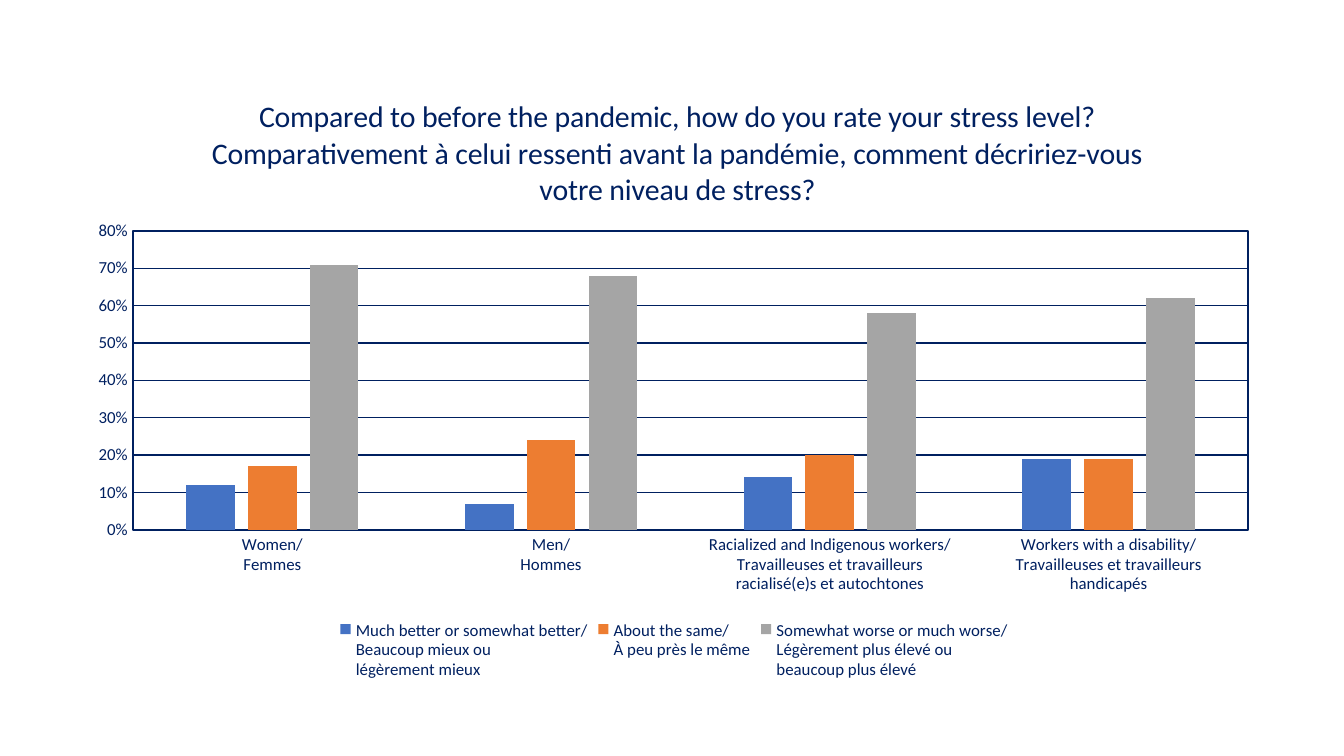
from lxml import etree
from pptx import Presentation, util as u
from pptx.chart.data import CategoryChartData
from pptx.dml.color import RGBColor
from pptx.enum import chart as kinds
from pptx.oxml import parse_xml
from pptx.oxml.ns import nsdecls, qn

PX = 914400 / 134.4
THEME = {
    "font": "Calibri",
    "ink": RGBColor.from_string("002060"),
    "bars": ["4472C4", "ED7D31", "A5A5A5"],
    "title_size": u.Pt(16),
    "label_size": u.Pt(9),
    "rule": u.Pt(0.75),
}
CHART = {"x": 75, "y": 67, "w": 1198, "h": 618}
PLOT = {"x": 133, "y": 231, "w": 1115, "h": 299}
TITLE = {"x": 208, "y": 93}


def place(element, index, frame, target=None):
    """Fix a chart part at a frame given in slide px."""
    for old in element.findall(qn("c:layout")):
        element.remove(old)
    layout = parse_xml(f"<c:layout {nsdecls('c')}><c:manualLayout/></c:layout>")
    settings = {"layoutTarget": target} if target else {}
    settings |= {f"{key}Mode": "edge" for key in frame if key in "xy"}
    for key, value in frame.items():
        start = CHART[key] if key in "xy" else 0
        span = CHART["w" if key in "xw" else "h"]
        settings[key] = f"{(value - start) / span:.4f}"
    for key, value in settings.items():
        etree.SubElement(layout[0], qn(f"c:{key}")).set("val", value)
    element.insert(index, layout)


def style_font(font, size):
    for key, value in {"name": THEME["font"], "size": size, "bold": False}.items():
        setattr(font, key, value)
    font.color.rgb = THEME["ink"]


deck = Presentation()
deck.slide_width, deck.slide_height = round(1344 * PX), round(756 * PX)
page = deck.slides.add_slide(deck.slide_layouts[6])

answers = CategoryChartData(number_format="0%")
answers.categories = [
    "Women/\nFemmes",
    "Men/\nHommes",
    "Racialized and Indigenous workers/\n"
    "Travailleuses et travailleurs racialisé(e)s et autochtones",
    "Workers with a disability/\nTravailleuses et travailleurs handicapés",
]
for name, values in {
    "Much better or somewhat better/\nBeaucoup mieux ou \nlégèrement mieux":
        [0.12, 0.07, 0.14, 0.19],
    "About the same/\nÀ peu près le même": [0.17, 0.24, 0.2, 0.19],
    "Somewhat worse or much worse/\nLégèrement plus élevé ou \nbeaucoup plus élevé":
        [0.71, 0.68, 0.58, 0.62],
}.items():
    answers.add_series(name, values)

chart = page.shapes.add_chart(
    kinds.XL_CHART_TYPE.COLUMN_CLUSTERED,
    *(round(CHART[key] * PX) for key in "xywh"), answers).chart
style_font(chart.font, THEME["label_size"])

# Title
heading = chart.chart_title.text_frame
heading.text = (
    "Compared to before the pandemic, how do you rate your stress level?\n"
    "Comparativement à celui ressenti avant la pandémie, "
    "comment décririez-vous votre niveau de stress?")
for para in heading.paragraphs:
    style_font(para.font, THEME["title_size"])
    for span in para.runs:
        style_font(span.font, THEME["title_size"])
chart.chart_title.include_in_layout = False
place(chart.chart_title._element, 1, TITLE)

# Bars
bars = chart.plots[0]
for key, value in {"gap_width": 219, "overlap": -27, "vary_by_categories": False}.items():
    setattr(bars, key, value)
for series, color in zip(bars.series, THEME["bars"]):
    series.format.fill.solid()
    series.format.fill.fore_color.rgb = RGBColor.from_string(color)

# Axes and gridlines
share, groups = chart.value_axis, chart.category_axis
for key, value in {"minimum_scale": 0, "maximum_scale": 0.8, "major_unit": 0.1,
                   "has_major_gridlines": True}.items():
    setattr(share, key, value)
for axis in (share, groups):
    axis.major_tick_mark = axis.minor_tick_mark = kinds.XL_TICK_MARK.NONE
    style_font(axis.tick_labels.font, THEME["label_size"])
share.tick_labels.number_format = "0%"
share.tick_labels.number_format_is_linked = False
share.format.line.fill.background()
for line in (groups.format.line, share.major_gridlines.format.line):
    line.color.rgb = THEME["ink"]
    line.width = THEME["rule"]

# Plot frame
plot_area = chart._chartSpace.chart.plotArea
place(plot_area, 0, PLOT, "inner")
plot_area.append(parse_xml(
    f'<c:spPr {nsdecls("c", "a")}><a:noFill/><a:ln w="{THEME["rule"]}"><a:solidFill>'
    f'<a:srgbClr val="{THEME["ink"]}"/></a:solidFill></a:ln></c:spPr>'))

# Legend
chart.has_legend = True
chart.legend.position = kinds.XL_LEGEND_POSITION.BOTTOM
chart.legend.include_in_layout = False
style_font(chart.legend.font, THEME["label_size"])

deck.save("out.pptx")
